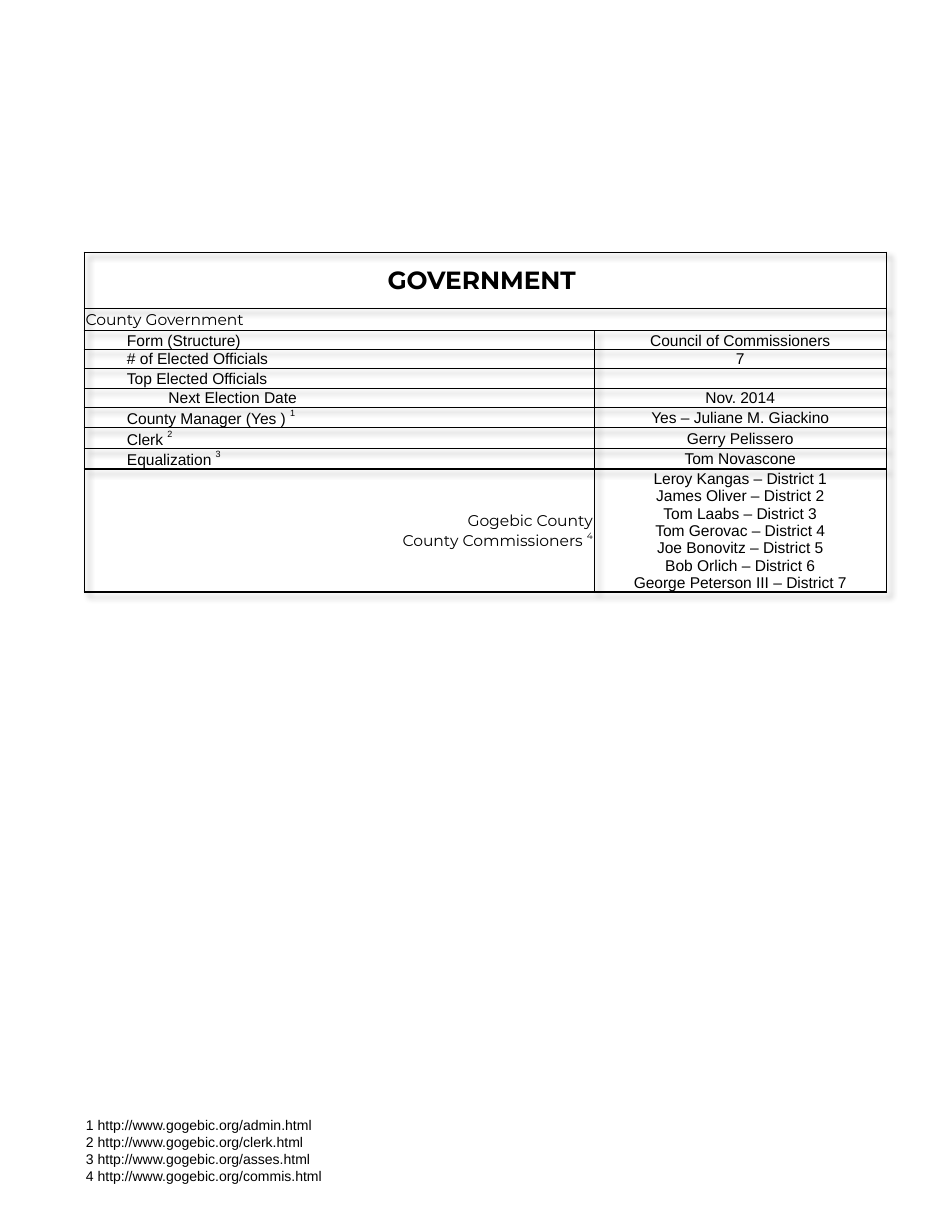
from lxml import etree
from pptx import Presentation
from pptx.dml.color import RGBColor
from pptx.enum import text
from pptx.oxml import ns, parse_xml
from pptx.util import Cm, Pt

BLACK = RGBColor(0, 0, 0)
HEADING_FONT, BODY_FONT = "Montserrat", "Arial"
THIN, THICK = 0.5, 1
INSET, INDENT, DEEP_INDENT = 0.03, 0.97, 1.91
NO_STYLE = "{2D5ABB26-0587-4C30-8999-92F81FD0307C}"
LEFT, CENTER, RIGHT = text.PP_ALIGN.LEFT, text.PP_ALIGN.CENTER, text.PP_ALIGN.RIGHT

TITLE = "GOVERNMENT "
SECTION = "County Government"
OFFICES = [
    ("Form (Structure)", "", "Council of Commissioners"),
    ("# of Elected Officials", "", "7"),
    ("Top Elected Officials", "", ""),
    ("Next Election Date", "", "Nov. 2014"),
    ("County Manager (Yes ) ", "1", "Yes – Juliane M. Giackino"),
    ("Clerk ", "2", "Gerry Pelissero"),
    ("Equalization ", "3", "Tom Novascone"),
]
BOARD = ["Gogebic County", "County Commissioners "]
BOARD_NOTE = "4"
COMMISSIONERS = ["Leroy Kangas", "James Oliver", "Tom Laabs", "Tom Gerovac",
                 "Joe Bonovitz", "Bob Orlich", "George Peterson III"]
PAGES = ["admin", "clerk", "asses", "commis"]
COLUMN_WIDTHS = [11.56, 6.63]
ROW_HEIGHTS = [1.27, 0.51] + [0.41] * (len(OFFICES) + 1)
FIRST_NOTED_ROW = 6


def write(frame, lines, size=10, font=BODY_FONT, bold=False, align=LEFT, note=""):
    for index, line in enumerate(lines):
        paragraph = frame.paragraphs[0] if index == 0 else frame.add_paragraph()
        paragraph.alignment = align
        if not line:
            etree.SubElement(paragraph._p, ns.qn("a:endParaRPr"), sz=str(size * 100))
            continue
        pieces = [(line, False)]
        if note and index == len(lines) - 1:
            pieces.append((note, True))
        for words, raised in pieces:
            run = paragraph.add_run()
            run.text = words
            run.font.size = Pt(size)
            run.font.name = font
            run.font.bold = bold
            run.font.color.rgb = BLACK
            if raised:
                run.font._element.set("baseline", "50000")


def set_borders(cell, left, top, right, bottom):
    properties = cell._tc.get_or_add_tcPr()
    for tag, width in zip(("lnL", "lnR", "lnT", "lnB"), (left, right, top, bottom)):
        line = etree.SubElement(properties, ns.qn(f"a:{tag}"), w=str(int(Pt(width))))
        fill = etree.SubElement(line, ns.qn("a:solidFill"))
        etree.SubElement(fill, ns.qn("a:srgbClr"), val=str(BLACK))


def prepare_cell(cell, row, column):
    cell.vertical_anchor = text.MSO_ANCHOR.MIDDLE
    cell.margin_left = cell.margin_top = cell.margin_right = Cm(INSET)
    cell.margin_bottom = 0
    noted = row >= FIRST_NOTED_ROW
    top = THICK if row < 2 or noted else THIN
    bottom = THICK if row == 0 or row >= FIRST_NOTED_ROW - 1 else THIN
    divider = THICK if row < 2 else THIN
    if column == 0:
        set_borders(cell, THICK, top, divider, bottom)
    else:
        set_borders(cell, divider, top, THICK, bottom)
    cell.fill.background()


def add_government_table(slide):
    shape = slide.shapes.add_table(
        len(ROW_HEIGHTS), len(COLUMN_WIDTHS), Cm(1.91), Cm(5.72),
        Cm(sum(COLUMN_WIDTHS)), Cm(sum(ROW_HEIGHTS)))
    table = shape.table
    table.first_row = table.horz_banding = False
    properties = table._tbl.tblPr
    properties.find(ns.qn("a:tableStyleId")).text = NO_STYLE
    properties.insert(0, parse_xml(
        f'<a:effectLst {ns.nsdecls("a")}>'
        '<a:outerShdw blurRad="50800" dist="50800" dir="2700000" algn="tl" rotWithShape="0">'
        '<a:srgbClr val="000000"><a:alpha val="40000"/></a:srgbClr>'
        '</a:outerShdw></a:effectLst>'))
    for column, width in zip(table.columns, COLUMN_WIDTHS):
        column.width = Cm(width)
    for index, height in enumerate(ROW_HEIGHTS):
        table.rows[index].height = Cm(height)
        for column in range(len(COLUMN_WIDTHS)):
            prepare_cell(table.cell(index, column), index, column)
    for index in range(2):
        table.cell(index, 0).merge(table.cell(index, 1))

    write(table.cell(0, 0).text_frame, [TITLE], size=16, font=HEADING_FONT,
          bold=True, align=CENTER)
    write(table.cell(1, 0).text_frame, [SECTION], font=HEADING_FONT)
    for index, (label, note, value) in enumerate(OFFICES, start=2):
        label_cell = table.cell(index, 0)
        label_cell.margin_left = Cm(DEEP_INDENT if label.startswith("Next") else INDENT)
        write(label_cell.text_frame, [label], note=note)
        write(table.cell(index, 1).text_frame, [value], align=CENTER)

    last = len(ROW_HEIGHTS) - 1
    table.cell(last, 0).margin_left = Cm(INDENT)
    write(table.cell(last, 0).text_frame, BOARD, font=HEADING_FONT,
          align=RIGHT, note=BOARD_NOTE)
    districts = [f"{name} – District {number}"
                 for number, name in enumerate(COMMISSIONERS, start=1)]
    write(table.cell(last, 1).text_frame, districts, align=CENTER)


def add_footnotes(slide):
    box = slide.shapes.add_textbox(Cm(1.7), Cm(25.2), Cm(10.8), Cm(1.8))
    box.text_frame.word_wrap = True
    notes = [f"{number} http://www.gogebic.org/{page}.html"
             for number, page in enumerate(PAGES, start=1)]
    write(box.text_frame, notes, size=9)


def main():
    presentation = Presentation()
    presentation.slide_width, presentation.slide_height = Cm(21.59), Cm(27.94)
    slide = presentation.slides.add_slide(presentation.slide_layouts[6])
    add_government_table(slide)
    add_footnotes(slide)
    presentation.save("out.pptx")


if __name__ == "__main__":
    main()
